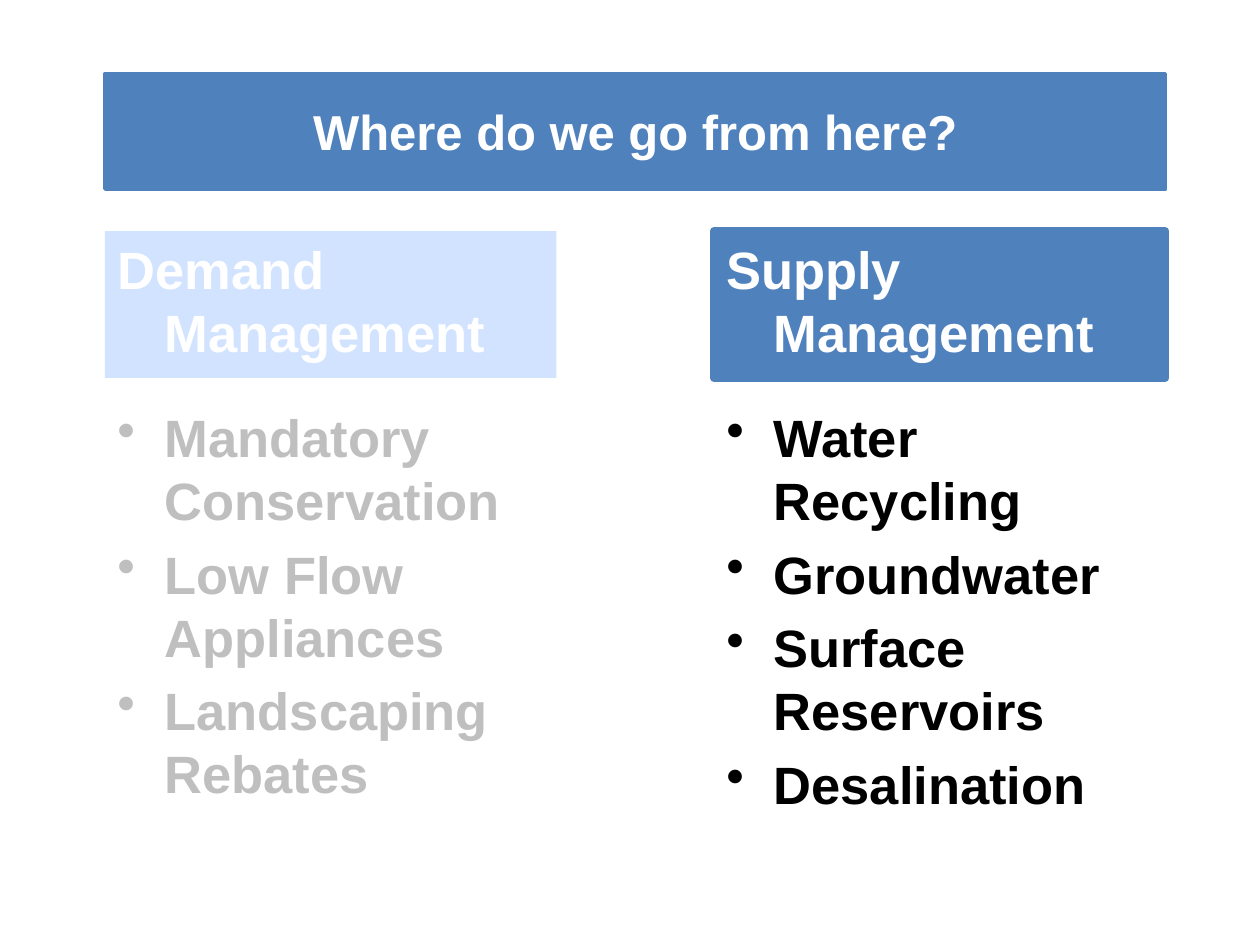
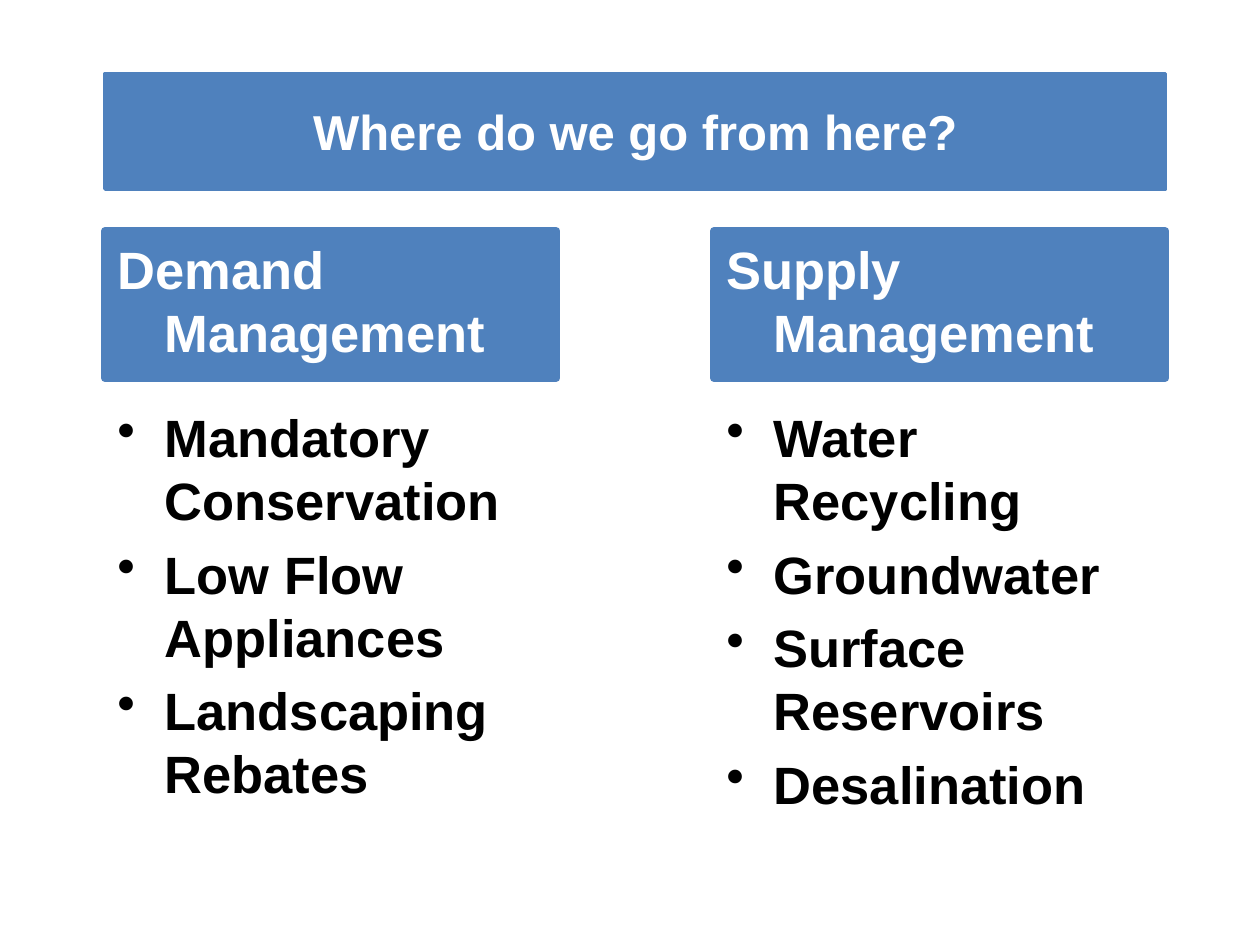
import pptx
import pptx.dml.color
import pptx.enum.shapes
import pptx.enum.text
import pptx.oxml.ns
import pptx.util
from lxml import etree

Pt = pptx.util.Pt
ALIGN = pptx.enum.text.PP_ALIGN
ANCHOR = pptx.enum.text.MSO_ANCHOR

COLOURS = {
    "band": "4F81BD",
    "faded band": "D1E3FF",
    "heading": "FFFFFF",
    "body": "000000",
    "faded body": "BFBFBF",
}
TITLE_ONLY = 5
LEFT, RIGHT = 60, 666
COLUMN_WIDTH = 258
DEMAND = ("Demand Management",
          ["Mandatory Conservation", "Low Flow Appliances", "Landscaping Rebates"])
SUPPLY = ("Supply Management",
          ["Water Recycling", "Groundwater", "Surface Reservoirs", "Desalination"])


def colour(name):
    return pptx.dml.color.RGBColor.from_string(COLOURS[name])


def write(frame, lines, size=30, color="body", align=ALIGN.LEFT,
          anchor=ANCHOR.TOP, hanging=0, bullet=None):
    """Fill a text frame with one paragraph per line, all in one format."""
    frame.word_wrap = True
    frame.auto_size = pptx.enum.text.MSO_AUTO_SIZE.NONE
    frame.vertical_anchor = anchor
    for index, line in enumerate(lines):
        paragraph = frame.add_paragraph() if index else frame.paragraphs[0]
        paragraph.alignment = align
        paragraph.space_before = Pt(6 if index else 0)
        properties = paragraph._p.get_or_add_pPr()
        if hanging:
            properties.set("marL", str(Pt(hanging)))
            properties.set("indent", str(-Pt(hanging)))
        if bullet:
            mark = etree.SubElement(properties, pptx.oxml.ns.qn("a:buChar"))
            mark.set("char", bullet)
        run = paragraph.add_run()
        run.text = line
        run.font.name = "Arial"
        run.font.size = Pt(size)
        run.font.bold = True
        run.font.color.rgb = colour(color)


class Deck:
    def __init__(self):
        self.presentation = pptx.Presentation()
        self.presentation.slide_width = Pt(720)
        self.presentation.slide_height = Pt(540)
        self.slide = None

    def add_slide(self, title):
        layout = self.presentation.slide_layouts[TITLE_ONLY]
        self.slide = self.presentation.slides.add_slide(layout)
        banner = self.slide.shapes.title
        banner.left, banner.top = Pt(LEFT), Pt(42)
        banner.width, banner.height = Pt(RIGHT - LEFT), Pt(66)
        self.paint(banner, "band", line_width=2)
        write(banner.text_frame, [title], size=28, color="heading",
              align=ALIGN.CENTER, anchor=ANCHOR.MIDDLE)

    def paint(self, shape, fill, line_width):
        shape.fill.solid()
        shape.fill.fore_color.rgb = colour(fill)
        if line_width:
            shape.line.color.rgb = colour(fill)
            shape.line.width = Pt(line_width)
        else:
            shape.line.fill.background()

    def heading(self, text, left, faded):
        band = self.slide.shapes.add_shape(
            pptx.enum.shapes.MSO_SHAPE.RECTANGLE,
            Pt(left), Pt(132), Pt(COLUMN_WIDTH), Pt(84))
        band.shadow.inherit = False
        self.paint(band, "faded band" if faded else "band", 0 if faded else 4.5)
        write(band.text_frame, [text], color="heading", hanging=27)

    def measures(self, items, left, faded):
        box = self.slide.shapes.add_textbox(
            Pt(left), Pt(228), Pt(COLUMN_WIDTH), Pt(282))
        write(box.text_frame, items, color="faded body" if faded else "body",
              hanging=27, bullet="•")

    def column(self, topic, left, faded=False):
        heading, items = topic
        self.heading(heading, left, faded)
        self.measures(items, left, faded)


def main():
    deck = Deck()
    for demand_faded in (True, False):
        deck.add_slide("Where do we go from here?")
        deck.column(DEMAND, LEFT, faded=demand_faded)
        deck.column(SUPPLY, RIGHT - COLUMN_WIDTH)
    deck.presentation.save("out.pptx")


if __name__ == "__main__":
    main()
